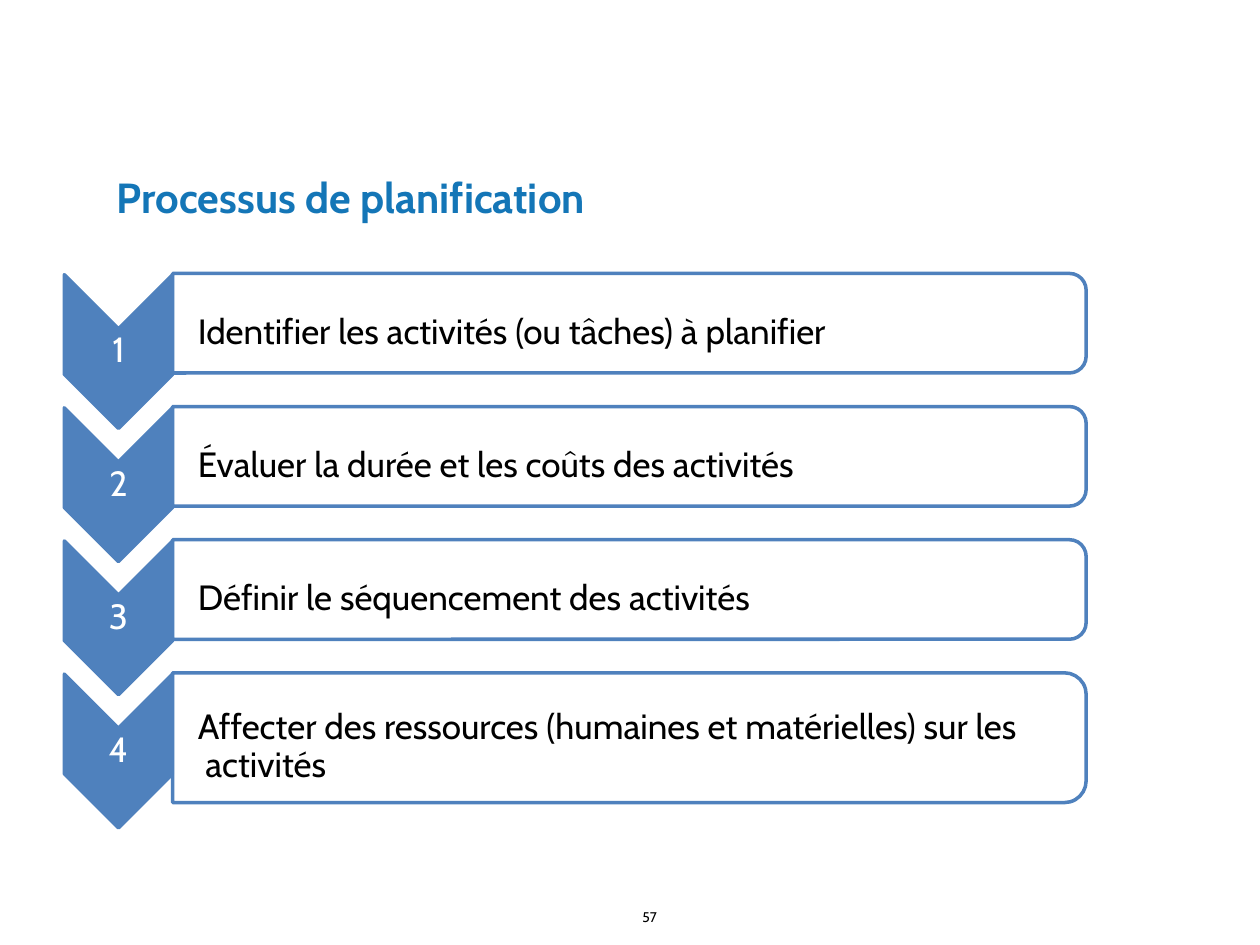
from typing import NamedTuple

from pptx import Presentation
from pptx.dml.color import RGBColor
from pptx.enum.shapes import MSO_SHAPE as Shape
from pptx.enum.text import MSO_ANCHOR as Anchor, PP_ALIGN as Align
from pptx.oxml.xmlchemy import OxmlElement as Element
from pptx.util import Inches, Pt

FONT = "Cabin"
BLUE, WHITE, BLACK, TITLE = "4F81BD", "FFFFFF", "000000", "1476B7"
PITCH = 3.17 / 3  # from one step to the next


class Step(NamedTuple):
    text: str
    high: float = 0.79


STEPS = [
    Step("Identifier les activités (ou tâches) à planifier"),
    Step("Évaluer la durée et les coûts des activités"),
    Step("Définir le séquencement des activités"),
    Step("Affecter des ressources (humaines et matérielles) sur les activités", 1.03),
]


def color(code: str) -> RGBColor:
    return RGBColor.from_string(code)


def style(para, size: float, code: str, bold: bool = False) -> None:
    font = para.font
    font.name, font.size, font.bold = FONT, Pt(size), bold
    font.color.rgb = color(code)


def indent(para, left: float, first: float) -> None:
    props = para._p.get_or_add_pPr()
    props.set("marL", str(Inches(left)))
    props.set("indent", str(Inches(first)))


def label(slide, text: str, left: float, top: float, width: float, high: float):
    box = slide.shapes.add_textbox(*map(Inches, (left, top, width, high)))
    box.text_frame.word_wrap = True
    para = box.text_frame.paragraphs[0]
    para.text = text
    return para


def turned(slide, kind: Shape, left: float, top: float, width: float,
           high: float, fill: str, text: str, code: str, inset: float = 0.01):
    """Add a shape turned a quarter, placed by its visible box, with level text."""
    x, y = left + (width - high) / 2, top + (high - width) / 2
    shape = slide.shapes.add_shape(kind, *map(Inches, (x, y, high, width)))
    shape.rotation = 90
    shape.shadow.inherit = False
    shape.fill.solid()
    shape.fill.fore_color.rgb = color(fill)
    shape.line.color.rgb = color(BLUE)
    shape.line.width = Pt(2)

    frame = shape.text_frame
    frame.word_wrap = True
    frame.vertical_anchor = Anchor.MIDDLE
    frame.margin_left = Inches(inset)
    frame.margin_top = frame.margin_right = frame.margin_bottom = Inches(0.01)
    frame._txBody.bodyPr.set("vert", "vert270")
    para = frame.paragraphs[0]
    para.text = text
    para.line_spacing = 0.9
    style(para, 20, code)
    return shape


def draw(slide, index: int, step: Step) -> None:
    shift = index * PITCH
    # Numbered chevron
    mark = turned(slide, Shape.CHEVRON, 0.51, 2.18 + shift, 0.86, 1.22,
                  BLUE, str(index + 1), WHITE)
    mark.text_frame.paragraphs[0].alignment = Align.CENTER

    # Step bar, slightly see-through
    bar = turned(slide, Shape.ROUND_2_SAME_RECTANGLE, 1.37, 2.17 + shift, 7.25,
                 step.high, WHITE, step.text, BLACK, 0.16)
    bar.adjustments[0], bar.adjustments[1] = 0.167, 0
    alpha = Element("a:alpha")
    alpha.set("val", "90000")
    bar.fill._xPr.solidFill.srgbClr.append(alpha)
    para = bar.text_frame.paragraphs[0]
    para.alignment = Align.LEFT
    indent(para, 0.25, -0.06)


def main() -> None:
    deck = Presentation()
    deck.slide_width, deck.slide_height = Inches(10), Inches(7.5)
    slide = deck.slides.add_slide(deck.slide_layouts[6])

    # Page number and title
    style(label(slide, "57", 5, 7.16, 3.27, 0.24), 8, BLACK)
    head = label(slide, "Processus de planification", 0.83, 1.31, 8.11, 5.43)
    indent(head, 0.38, -0.38)
    style(head, 24, TITLE, True)

    # Steps
    for index, step in enumerate(STEPS):
        draw(slide, index, step)

    deck.save("out.pptx")


if __name__ == "__main__":
    main()
